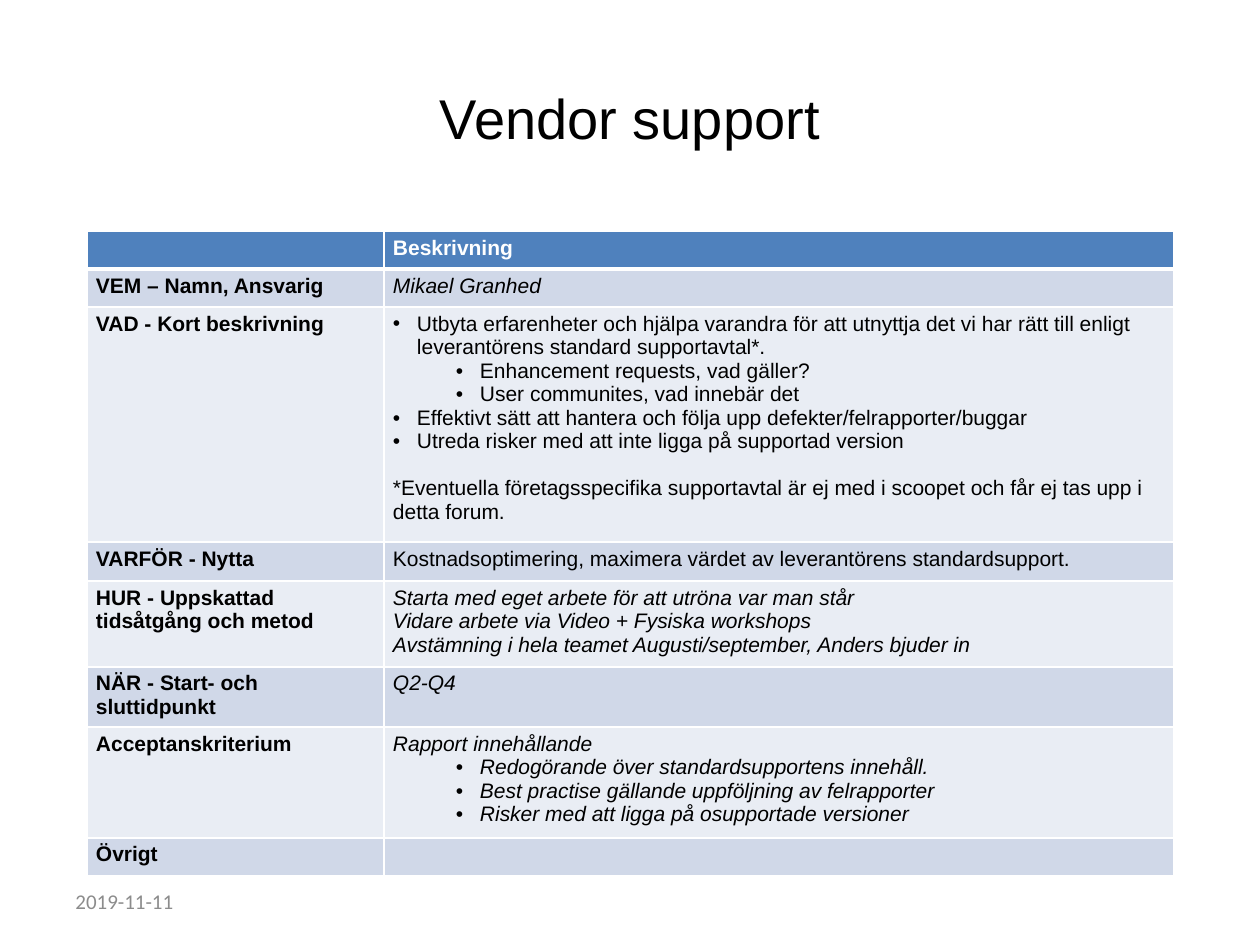
from copy import deepcopy
from dataclasses import dataclass

from pptx import Presentation
from pptx.dml.color import RGBColor
from pptx.enum.text import MSO_ANCHOR, PP_ALIGN
from pptx.oxml.ns import qn
from pptx.oxml.xmlchemy import OxmlElement
from pptx.util import Emu, Pt

PX = 914400 // 126


def px(length):
    return Emu(length * PX)


@dataclass(frozen=True)
class Theme:
    heading_font: str = "Arial"
    footer_font: str = "Calibri"
    title_size: int = 32
    body_size: int = 12
    ink: str = "000000"
    white: str = "FFFFFF"
    muted: str = "8C8C8C"
    header: str = "4F81BD"
    bands: tuple = ("D0D8E8", "E9EDF4")


THEME = Theme()

HEADINGS = ("", "Beskrivning")
COLUMNS = (297, 790)
HEADER_HEIGHT = 38
# Label, row height, italic, then (text, style) for each paragraph
ROWS = (
    ("VEM – Namn, Ansvarig", 38, True, [("Mikael Granhed", "plain")]),
    ("VAD - Kort beskrivning", 221, False, [
        ("Utbyta erfarenheter och hjälpa varandra för att utnyttja det vi har rätt till enligt "
         "leverantörens standard supportavtal*.", "bullet"),
        ("Enhancement requests, vad gäller?", "sub"),
        ("User communites, vad innebär det", "sub"),
        ("Effektivt sätt att hantera och följa upp defekter/felrapporter/buggar", "bullet"),
        ("Utreda risker med att inte ligga på supportad version", "bullet"),
        ("*Eventuella företagsspecifika supportavtal är ej med i scoopet och får ej tas upp i "
         "detta forum.", "note"),
    ]),
    ("VARFÖR - Nytta", 39, False, [
        ("Kostnadsoptimering, maximera värdet av leverantörens standardsupport.", "plain")]),
    ("HUR - Uppskattad tidsåtgång och metod", 79, True, [
        ("Starta med eget arbete för att utröna var man står\n"
         "Vidare arbete via Video + Fysiska workshops\n"
         "Avstämning i hela teamet Augusti/september, Anders bjuder in", "plain")]),
    ("NÄR - Start- och sluttidpunkt", 57, True, [("Q2-Q4", "plain")]),
    ("Acceptanskriterium", 104, True, [
        ("Rapport innehållande", "plain"),
        ("Redogörande över standardsupportens innehåll.", "sub"),
        ("Best practise gällande uppföljning av felrapporter", "sub"),
        ("Risker med att ligga på osupportade versioner", "sub"),
    ]),
    ("Övrigt", 38, False, [("", "plain")]),
)
# Style: level, left margin in px, space before in points
STYLES = {"plain": (0, 0, 0), "bullet": (0, 24, 0), "sub": (1, 87, 0), "note": (0, 0, 13.5)}


def write(para, text, *, size=THEME.body_size, font=THEME.heading_font, color=THEME.ink,
          bold=False, italic=False, style="plain", align=PP_ALIGN.LEFT):
    level, margin, before = STYLES[style]
    para.level, para.alignment = level, align
    if before:
        para.space_before = Pt(before)
    if margin:
        properties = para._p.get_or_add_pPr()
        properties.set("marL", str(px(margin)))
        properties.set("indent", str(-px(24)))
        for tag, name, value in (("a:buFont", "typeface", "Arial"), ("a:buChar", "char", "•")):
            bullet = OxmlElement(tag)
            bullet.set(name, value)
            properties.append(bullet)
    para.text = text
    for span in para.runs:
        span.font.size, span.font.name = Pt(size), font
        span.font.bold, span.font.italic = bold, italic
        span.font.color.rgb = RGBColor.from_string(color)
    # Line breaks take the format of the text around them
    for line_break in para._p.findall(qn("a:br")):
        line_break.append(deepcopy(para.runs[0]._r.rPr))
    # An empty cell still needs its type size to keep the row low
    if not text:
        ending = OxmlElement("a:endParaRPr")
        ending.set("sz", str(size * 100))
        para._p.append(ending)


def add_label(page, box, text, **text_format):
    label = page.shapes.add_textbox(*map(px, box))
    label.text_frame.word_wrap = True
    label.text_frame.vertical_anchor = MSO_ANCHOR.MIDDLE
    write(label.text_frame.paragraphs[0], text, **text_format)


def add_borders(cell, top=1, bottom=1):
    properties = cell._tc.get_or_add_tcPr()
    for place, (side, width) in enumerate((("L", 1), ("R", 1), ("T", top), ("B", bottom))):
        line = OxmlElement(f"a:ln{side}")
        line.set("w", str(Pt(width)))
        fill = OxmlElement("a:solidFill")
        color = OxmlElement("a:srgbClr")
        color.set("val", THEME.white)
        fill.append(color)
        line.append(fill)
        properties.insert(place, line)


def fill_cell(cell, paragraphs, fill, top=1, bottom=1, **text_format):
    cell.margin_left = cell.margin_right = px(9)
    cell.margin_top = cell.margin_bottom = px(5)
    cell.fill.solid()
    cell.fill.fore_color.rgb = RGBColor.from_string(fill)
    add_borders(cell, top, bottom)
    frame = cell.text_frame
    for index, (text, style) in enumerate(paragraphs):
        para = frame.add_paragraph() if index else frame.paragraphs[0]
        write(para, text, style=style, **text_format)


def add_plan_table(page, box):
    table = page.shapes.add_table(len(ROWS) + 1, len(COLUMNS), *map(px, box)).table
    table.horz_banding = False
    for column, width in zip(table.columns, COLUMNS):
        column.width = px(width)

    # Header row
    table.rows[0].height = px(HEADER_HEIGHT)
    for column, heading in enumerate(HEADINGS):
        fill_cell(table.cell(0, column), [(heading, "plain")], THEME.header,
                  bottom=3, bold=True, color=THEME.white)

    # Banded body rows
    for index, (label, height, italic, paragraphs) in enumerate(ROWS):
        row = index + 1
        table.rows[row].height = px(height)
        band = THEME.bands[index % 2]
        top = 1 if index else 3
        fill_cell(table.cell(row, 0), [(label, "plain")], band, top=top, bold=True)
        fill_cell(table.cell(row, 1), paragraphs, band, top=top, italic=italic)


def build_page(page):
    # Title
    add_label(page, (63, 38, 1134, 158), "Vendor support",
              size=THEME.title_size, align=PP_ALIGN.CENTER)
    # Plan table
    height = HEADER_HEIGHT + sum(row[1] for row in ROWS)
    add_plan_table(page, (87, 231, sum(COLUMNS), height))
    # Date
    add_label(page, (63, 876, 294, 50), "2019-11-11", font=THEME.footer_font, color=THEME.muted)


def main():
    deck = Presentation()
    deck.slide_width, deck.slide_height = px(1260), px(945)
    build_page(deck.slides.add_slide(deck.slide_layouts[6]))
    deck.save("out.pptx")


if __name__ == "__main__":
    main()
